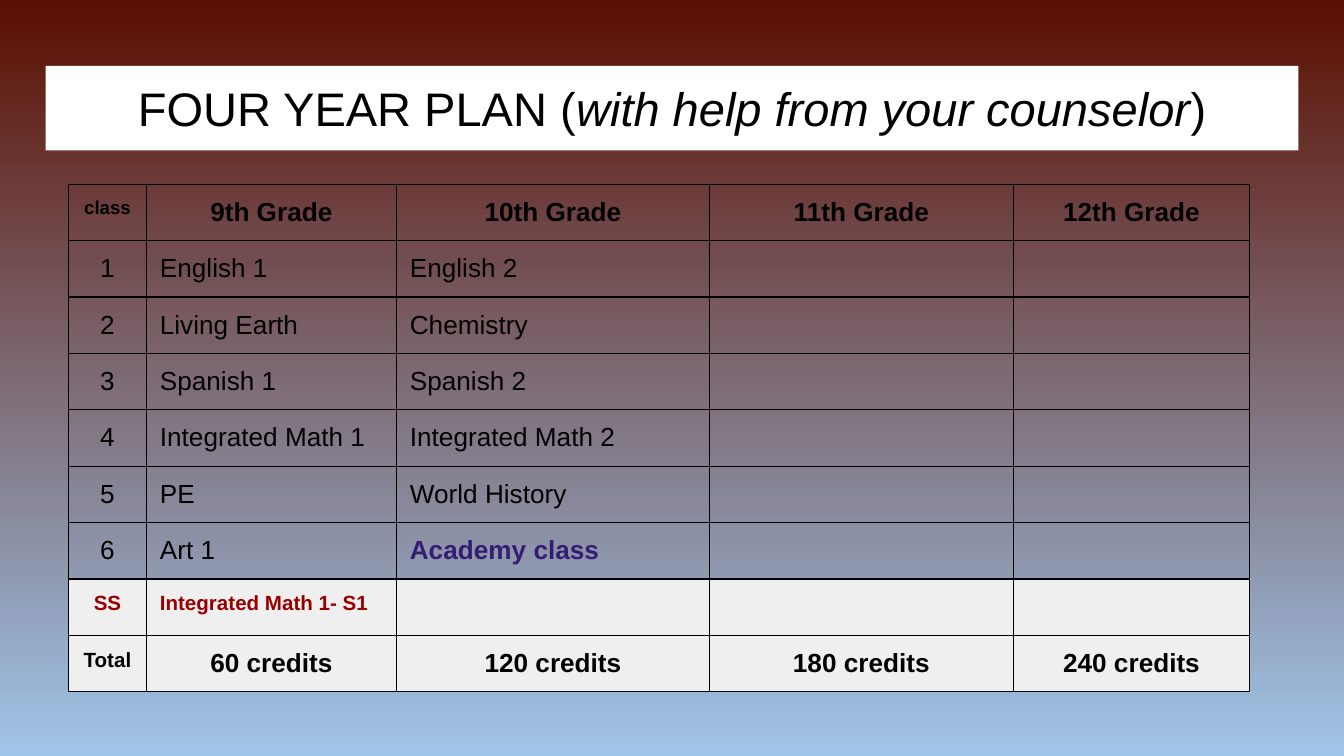
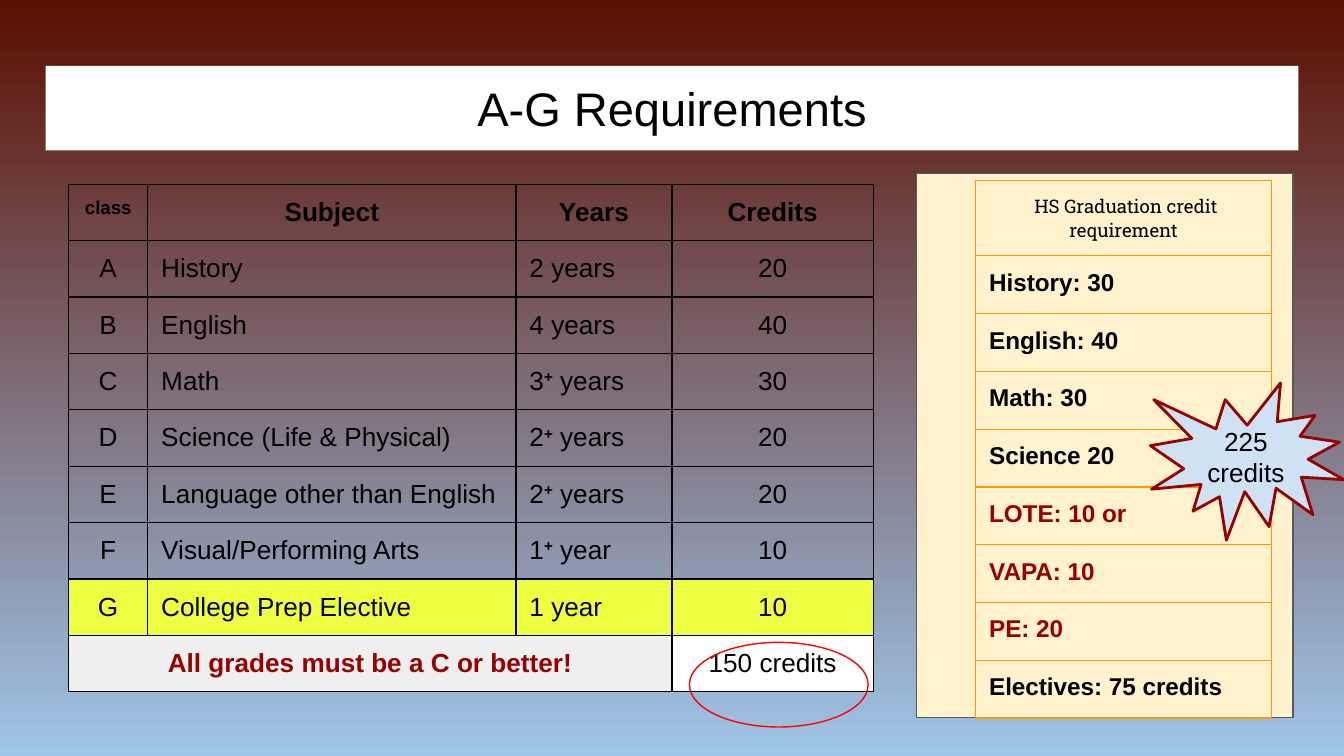
"""Build two slides: a four year class plan and the A-G requirements."""
import pptx
import pptx.dml.color
import pptx.enum.shapes
import pptx.enum.text
import pptx.oxml.ns
import pptx.util
from lxml import etree

Inches, Pt = pptx.util.Inches, pptx.util.Pt
SHAPE = pptx.enum.shapes.MSO_SHAPE
ALIGN, ANCHOR = pptx.enum.text.PP_ALIGN, pptx.enum.text.MSO_ANCHOR
qn = pptx.oxml.ns.qn

COLORS = {
    "sky": "9FC5E8", "maroon": "5B0F00", "white": "FFFFFF", "black": "000000",
    "grey": "EFEFEF", "crimson": "980000", "purple": "351C75", "yellow": "EEFF41",
    "cream": "FFF2CC", "slate": "595959", "orange": "FF9900", "pale": "CFE2F3",
    "red": "FF0000",
}
MARGIN = Inches(0.1)
BASE = {"size": 14, "color": "black", "bold": False, "font": "Arial",
        "center": False, "fill": None}
HEADER = {"bold": True, "center": True}
SMALL = {"size": 10}


def years(number, unit):
    return [(number, ""), ("+", "super"), (f" {unit}", "")]


PLAN = {
    "at": (0.51, 1.37), "cols": [0.58, 1.86, 2.33, 2.26, 1.76],
    "heights": [0.42] * 9, "border": "black", "centered": {0},
    "rows": [
        ["class", "9th Grade", "10th Grade", "11th Grade", "12th Grade"],
        ["1", "English 1", "English 2", "", ""],
        ["2", "Living Earth", "Chemistry", "", ""],
        ["3", "Spanish 1", "Spanish 2", "", ""],
        ["4", "Integrated Math 1", "Integrated Math 2", "", ""],
        ["5", "PE", "World History", "", ""],
        ["6", "Art 1", "Academy class", "", ""],
        ["SS", "Integrated Math 1- S1", "", "", ""],
        ["Total", "60 credits", "120 credits", "180 credits", "240 credits"],
    ],
    "row_styles": {
        0: HEADER,
        7: {"size": 11, "color": "crimson", "bold": True, "fill": "grey"},
        8: {**HEADER, "fill": "grey"},
    },
    "cell_styles": {
        (0, 0): SMALL, (6, 2): {"color": "purple", "bold": True}, (8, 0): {"size": 11},
    },
}
REQUIREMENTS = {
    "at": (0.51, 1.37), "cols": [0.59, 2.74, 1.16, 1.5],
    "heights": [0.42] * 9, "border": "black", "centered": {0, 3},
    "rows": [
        ["class", "Subject", "Years", "Credits"],
        ["A", "History", "2 years", "20"],
        ["B", "English", "4 years", "40"],
        ["C", "Math", years("3", "years"), "30"],
        ["D", "Science (Life & Physical)", years("2", "years"), "20"],
        ["E", "Language other than English", years("2", "years"), "20"],
        ["F", "Visual/Performing Arts", years("1", "year"), "10"],
        ["G", "College Prep Elective", "1 year", "10"],
        ["All grades must be a C or better!", "", "", "150 credits"],
    ],
    "row_styles": {0: HEADER, 7: {"fill": "yellow"}, 8: {"fill": "grey"}},
    "cell_styles": {
        (0, 0): SMALL, (8, 0): {"color": "crimson", "bold": True},
        (8, 3): {"fill": "white"},
    },
    "merge": ((8, 0), (8, 2)),
}
GRADUATION_ROWS = [
    " HS Graduation credit requirement", "History: 30", "English: 40", "Math: 30",
    "Science 20", "LOTE: 10 or", "VAPA: 10", "PE: 20", "Electives: 75 credits",
]
GRADUATION = {
    "at": (7.26, 1.34), "cols": [2.2], "heights": [0.51] + [0.43] * 8,
    "border": "orange", "centered": set(),
    "rows": [[text] for text in GRADUATION_ROWS],
    "row_styles": {
        0: {"size": 10, "font": "Roboto Slab", "center": True, "fill": "cream"},
        **{i: {"size": 13, "bold": True, "color": "crimson" if i in (5, 6, 7) else "black"}
           for i in range(1, 9)},
    },
    "cell_styles": {},
}
PLAN_TITLE = [("FOUR YEAR PLAN (", ""), ("with help from your counselor", "italic"), (")", "")]


def rgb(name):
    return pptx.dml.color.RGBColor.from_string(COLORS[name])


def paint(fill, color):
    if color:
        fill.solid()
        fill.fore_color.rgb = rgb(color)
    else:
        fill.background()


def write(tf, content, style):
    p = tf.paragraphs[0]
    p.alignment = ALIGN.CENTER if style["center"] else ALIGN.LEFT
    p.font.size, p.font.name = Pt(style["size"]), style["font"]
    p.font.bold, p.font.color.rgb = style["bold"], rgb(style["color"])
    if not content:
        etree.SubElement(p._p, qn("a:endParaRPr"), sz=str(style["size"] * 100))
        return
    for text, effect in [(content, "")] if isinstance(content, str) else content:
        r = p.add_run()
        r.text = text
        if effect == "italic":
            r.font.italic = True
        elif effect == "super":
            r.font.bold = True
            r._r.get_or_add_rPr().set("baseline", "30000")


def add_box(slide, kind, box, fill=None, line=None, width=0.75, content="", size=14):
    sp = slide.shapes.add_shape(kind, *map(Inches, box))
    sp.shadow.inherit = False
    paint(sp.fill, fill)
    paint(sp.line.fill, line)
    if line:
        sp.line.width = Pt(width)
    if content:
        tf = sp.text_frame
        tf.word_wrap = True
        tf.vertical_anchor = ANCHOR.MIDDLE
        tf.margin_left = tf.margin_right = tf.margin_top = tf.margin_bottom = MARGIN
        write(tf, content, {**BASE, "size": size, "center": True})


def add_borders(cell, color):
    tc_pr = cell._tc.get_or_add_tcPr()
    for i, side in enumerate(("lnL", "lnR", "lnT", "lnB")):
        ln = etree.Element(qn(f"a:{side}"), w=str(Pt(0.75)))
        solid = etree.SubElement(ln, qn("a:solidFill"))
        etree.SubElement(solid, qn("a:srgbClr"), val=COLORS[color])
        tc_pr.insert(i, ln)


def add_grid(slide, grid):
    rows, cols, heights = grid["rows"], grid["cols"], grid["heights"]
    box = (*grid["at"], sum(cols), sum(heights))
    table = slide.shapes.add_table(len(rows), len(cols), *map(Inches, box)).table
    table.first_row = table.horz_banding = False
    for column, width in zip(table.columns, cols):
        column.width = Inches(width)
    for i, (row, height) in enumerate(zip(rows, heights)):
        table.rows[i].height = Inches(height)
        for j, content in enumerate(row):
            style = {**BASE, "center": j in grid["centered"],
                     **grid["row_styles"].get(i, {}), **grid["cell_styles"].get((i, j), {})}
            cell = table.cell(i, j)
            cell.margin_left = cell.margin_right = MARGIN
            cell.margin_top = cell.margin_bottom = MARGIN
            paint(cell.fill, style["fill"])
            add_borders(cell, grid["border"])
            write(cell.text_frame, content, style)
    if "merge" in grid:
        first, last = grid["merge"]
        table.cell(*first).merge(table.cell(*last))


def add_slide(prs, title):
    slide = prs.slides.add_slide(prs.slide_layouts[6])
    fill = slide.background.fill
    fill.gradient()
    fill.gradient_angle = 90
    for stop, position, color in zip(fill.gradient_stops, (0, 1), ("sky", "maroon")):
        stop.position = position
        stop.color.rgb = rgb(color)
    add_box(slide, SHAPE.RECTANGLE, (0.34, 0.49, 9.32, 0.63), "white", content=title, size=25.2)
    return slide


def main():
    prs = pptx.Presentation()
    prs.slide_width = Inches(10)
    prs.slide_height = prs.slide_width * 9 // 16

    add_grid(add_slide(prs, PLAN_TITLE), PLAN)

    slide = add_slide(prs, "A-G Requirements")
    add_box(slide, SHAPE.RECTANGLE, (6.82, 1.29, 2.8, 4.05), "cream", "slate")
    add_grid(slide, REQUIREMENTS)
    add_grid(slide, GRADUATION)
    add_box(slide, SHAPE.EXPLOSION1, (8.56, 2.85, 1.44, 1.17), "pale", "crimson", 1.5,
            "225 credits")
    add_box(slide, SHAPE.OVAL, (5.13, 4.78, 1.33, 0.63), line="red")

    prs.save("out.pptx")


if __name__ == "__main__":
    main()
